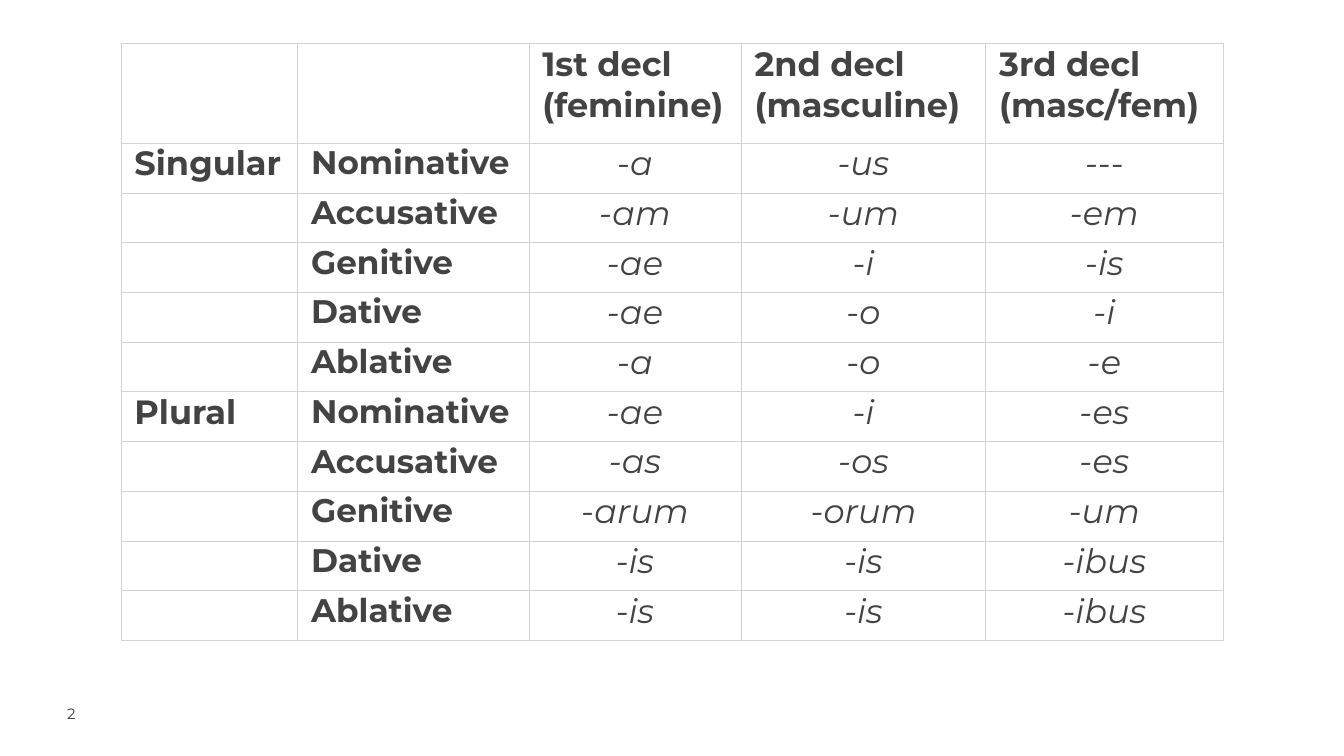
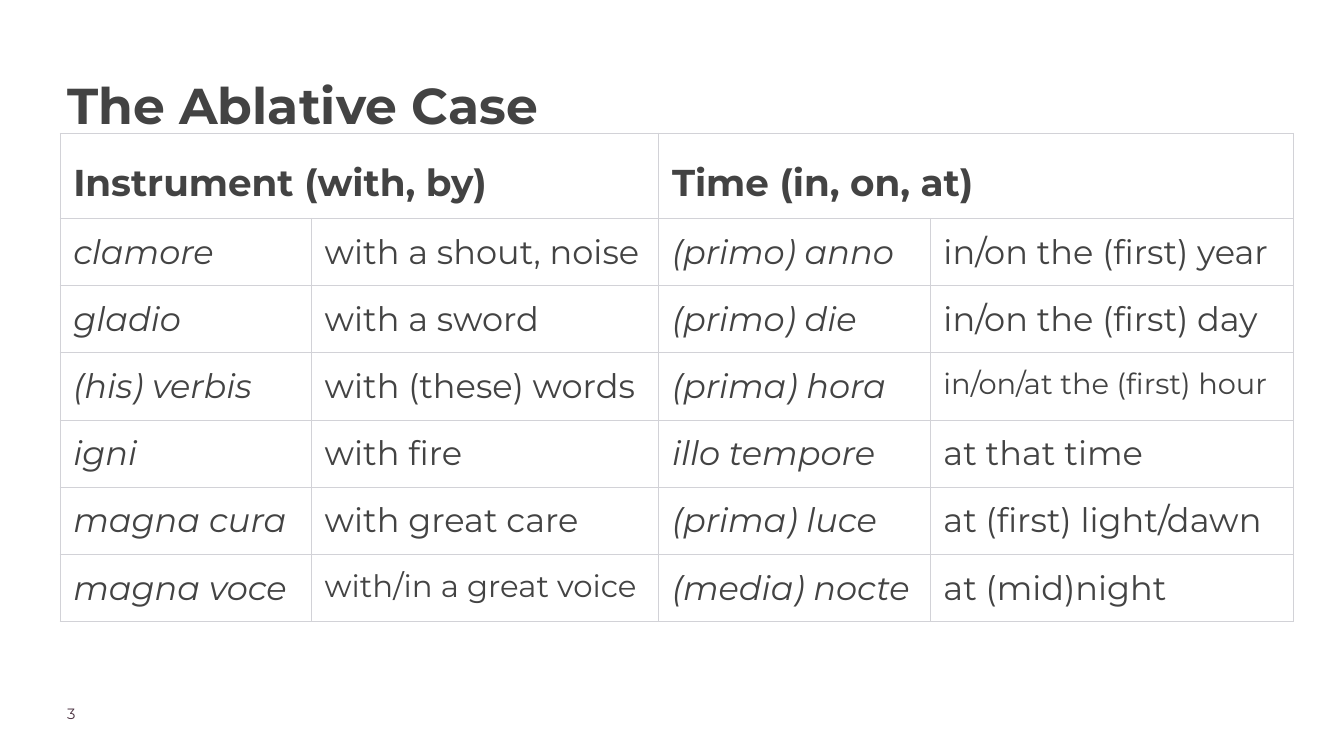
from lxml import etree
from pptx import Presentation
from pptx import util as u
from pptx.dml.color import RGBColor
from pptx.enum import text
from pptx.oxml.ns import qn

FONT = "Montserrat"
INK, NUMBER, BORDER, WHITE = "434343", "4B3241", "D2D2D7", "FFFFFF"
HEAD = dict(size=36, bold=True)
CASE = dict(size=35, bold=True)
ENDING = dict(size=36, italic=True, align="CENTER")
SECTION = dict(size=40, bold=True, spacing=1.3)
LATIN = dict(size=36, italic=True)
ENGLISH = dict(size=36)


def rgb(value):
    return RGBColor.from_string(value)


class Deck:
    def __init__(self, width, height):
        self.prs = Presentation()
        self.prs.slide_width, self.prs.slide_height = u.Inches(width), u.Inches(height)

    def slide(self, number):
        self.s = self.prs.slides.add_slide(self.prs.slide_layouts[6])
        self.text(str(number), 1, 10.48, 1.57, 0.39, size=16, color=NUMBER)

    def fill_text(self, tf, words, size, color=INK, align="LEFT", spacing=1.0, **style):
        for i, line in enumerate(words.split("\n")):
            p = tf.paragraphs[0] if i == 0 else tf.add_paragraph()
            p.alignment = getattr(text.PP_ALIGN, align)
            p.line_spacing = spacing
            r = p.add_run()
            r.text = line
            r.font.color.rgb = rgb(color)
            values = dict(name=FONT, size=u.Pt(size), bold=False, italic=False)
            for name, value in (values | style).items():
                setattr(r.font, name, value)

    def text(self, words, x, y, w, h, **style):
        tf = self.s.shapes.add_textbox(*map(u.Inches, (x, y, w, h))).text_frame
        tf.word_wrap = True
        for side in ("left", "top", "right", "bottom"):
            setattr(tf, f"margin_{side}", 0)
        self.fill_text(tf, words, **style)

    def border(self, cell):
        tcPr = cell._tc.get_or_add_tcPr()
        for side in "LRTB":
            ln = etree.SubElement(tcPr, qn(f"a:ln{side}"), w=str(u.Pt(0.75)))
            fill = etree.SubElement(ln, qn("a:solidFill"))
            etree.SubElement(fill, qn("a:srgbClr"), val=BORDER)

    def table(self, x, y, widths, heights, rows, pad):
        """Each row is a list of (words, style) pairs."""
        size = (x, y, sum(widths), sum(heights))
        tbl = self.s.shapes.add_table(len(heights), len(widths), *map(u.Inches, size)).table
        tbl.first_row = tbl.horz_banding = False
        for column, width in zip(tbl.columns, widths):
            column.width = u.Inches(width)
        for row, height in zip(tbl.rows, heights):
            row.height = u.Inches(height)
        for cell in tbl.iter_cells():
            self.border(cell)
            cell.fill.solid()
            cell.fill.fore_color.rgb = rgb(WHITE)
            cell.margin_left = cell.margin_right = u.Inches(0.2)
            cell.margin_top = cell.margin_bottom = u.Inches(pad)
        for i, row in enumerate(rows):
            for j, (words, style) in enumerate(row):
                if words:
                    self.fill_text(tbl.cell(i, j).text_frame, words, **style)
        return tbl

    def phrases(self, x, widths, heading, pairs, smaller):
        """A heading across two columns, over Latin phrases and translations."""
        rows = [[(heading, SECTION)]]
        for latin, english in pairs:
            size = smaller.get(english, ENGLISH["size"])
            rows.append([(latin, LATIN), (english, ENGLISH | dict(size=size))])
        tbl = self.table(x, 1.98, widths, [1.16] + [0.92] * len(pairs), rows, pad=0.2)
        tbl.cell(0, 0).merge(tbl.cell(0, 1))


HEADINGS = ["", "", "1st decl\n(feminine)", "2nd decl\n(masculine)", "3rd decl\n(masc/fem)"]
CASES = ["Nominative", "Accusative", "Genitive", "Dative", "Ablative"]
ENDINGS = {
    "Singular": ["-a -us ---", "-am -um -em", "-ae -i -is", "-ae -o -i", "-a -o -e"],
    "Plural": ["-ae -i -es", "-as -os -es", "-arum -orum -um", "-is -is -ibus", "-is -is -ibus"],
}
INSTRUMENT = [
    ("clamore", "with a shout, noise"),
    ("gladio", "with a sword"),
    ("(his) verbis", "with (these) words"),
    ("igni", "with fire"),
    ("magna cura", "with great care"),
    ("magna voce", "with/in a great voice"),
]
TIME = [
    ("(primo) anno", "in/on the (first) year"),
    ("(primo) die", "in/on the (first) day"),
    ("(prima) hora", "in/on/at the (first) hour"),
    ("illo tempore", "at that time"),
    ("(prima) luce", "at (first) light/dawn"),
    ("(media) nocte", "at (mid)night"),
]


def main():
    deck = Deck(20, 11.25)

    # Declension endings
    deck.slide(2)
    rows = [[(heading, HEAD) for heading in HEADINGS]]
    for number, lines in ENDINGS.items():
        for i, (case, line) in enumerate(zip(CASES, lines)):
            label = number if i == 0 else ""
            rows.append([(label, HEAD), (case, CASE)] + [(e, ENDING) for e in line.split()])
    deck.table(1.8, 0.65, [2.63, 3.44, 3.16, 3.64, 3.53], [1.48] + [0.74] * 10, rows, pad=0)

    # Uses of the ablative
    deck.slide(3)
    deck.phrases(0.89, [3.74, 5.17], "Instrument (with, by)", INSTRUMENT,
                 {"with/in a great voice": 33})
    deck.text("The Ablative Case", 1, 0.97, 18.24, 0.99, size=54, bold=True, spacing=1.15)
    deck.phrases(9.8, [4.04, 5.4], "Time (in, on, at)", TIME,
                 {"in/on/at the (first) hour": 31})

    deck.prs.save("out.pptx")


if __name__ == "__main__":
    main()
